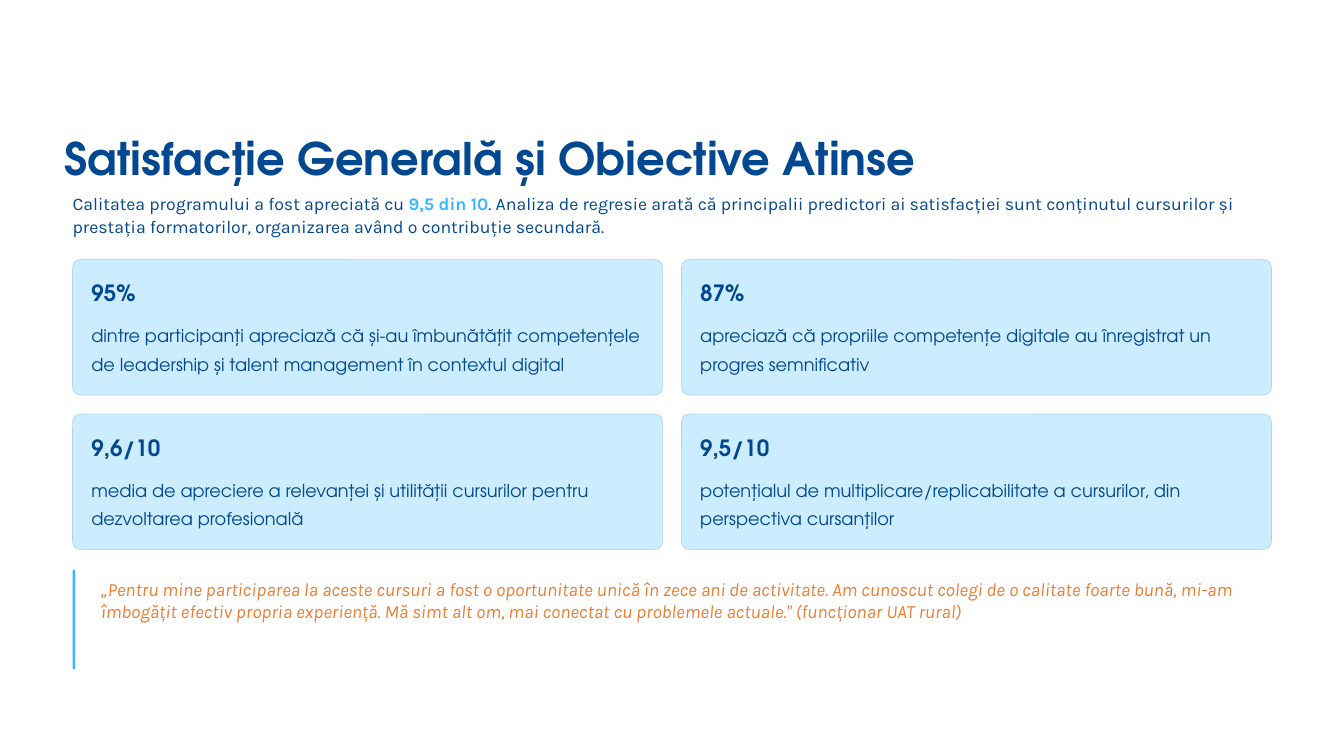
from pptx import Presentation
from pptx.dml.color import RGBColor
from pptx.enum.shapes import MSO_SHAPE as SHAPE
from pptx.enum.text import MSO_ANCHOR as ANCHOR, MSO_AUTO_SIZE as AUTO, PP_ALIGN as ALIGN
from pptx.util import Inches, Pt

COLORS = {
    "navy": "014890",
    "sky": "38B6FF",
    "card": "CCECFF",
    "border": "B2D2E5",
    "orange": "ED7D31",
    "white": "FFFFFF",
}
HEAD_FONT = "TeX Gyre Adventor"
BODY_FONT = "Karla"

CARDS = [
    ("95%", "dintre participanți apreciază că și-au îmbunătățit competențele "
            "de leadership și talent management în contextul digital"),
    ("87%", "apreciază că propriile competențe digitale au înregistrat un "
            "progres semnificativ"),
    ("9,6/10", "media de apreciere a relevanței și utilității cursurilor pentru "
               "dezvoltarea profesională"),
    ("9,5/10", "potențialul de multiplicare/replicabilitate a cursurilor, din "
               "perspectiva cursanților"),
]


def rgb(name):
    return RGBColor.from_string(COLORS[name])


def add_run(p, text, font=BODY_FONT, size=9.5, color="navy", bold=False, italic=False):
    r = p.add_run()
    r.text = text
    r.font.name = font
    r.font.size = Pt(size)
    r.font.color.rgb = rgb(color)
    r.font.bold = bold
    r.font.italic = italic


class SlideBuilder:
    def __init__(self, slide):
        self.slide = slide
        slide.background.fill.solid()
        slide.background.fill.fore_color.rgb = rgb("white")

    def frame(self, sp, spacing, wrap):
        tf = sp.text_frame
        tf.margin_left = tf.margin_right = tf.margin_top = tf.margin_bottom = 0
        tf.auto_size = AUTO.NONE
        tf.vertical_anchor = ANCHOR.TOP
        tf.word_wrap = wrap
        p = tf.paragraphs[0]
        p.alignment = ALIGN.LEFT
        p.line_spacing = Pt(spacing)
        return p

    def title(self, text, x, y, w, h):
        sp = self.slide.shapes.title
        sp.left, sp.top, sp.width, sp.height = map(Inches, (x, y, w, h))
        p = self.frame(sp, 30.5, False)
        add_run(p, text, font=HEAD_FONT, size=24, bold=True)

    def text(self, runs, x, y, w, h, spacing=12, wrap=True):
        sp = self.slide.shapes.add_textbox(*map(Inches, (x, y, w, h)))
        p = self.frame(sp, spacing, wrap)
        for text, style in runs:
            add_run(p, text, **style)

    def box(self, kind, x, y, w, h, fill, line=None):
        sp = self.slide.shapes.add_shape(kind, *map(Inches, (x, y, w, h)))
        sp.shadow.inherit = False
        sp.fill.solid()
        sp.fill.fore_color.rgb = rgb(fill)
        if line:
            sp.line.color.rgb = rgb(line)
            sp.line.width = Pt(0.38)
        else:
            sp.line.fill.background()
        return sp

    def card(self, value, label, x, y):
        sp = self.box(SHAPE.ROUNDED_RECTANGLE, x, y, 4.39, 1.01, "card", "border")
        sp.adjustments[0] = 0.06
        self.text([(value, dict(font=HEAD_FONT, size=12, bold=True))],
                  x + 0.14, y + 0.14, 1.7, 0.21, spacing=15, wrap=False)
        self.text([(label, dict(font=HEAD_FONT))],
                  x + 0.14, y + 0.43, 4.11, 0.43, spacing=15.5)


def main():
    prs = Presentation()
    prs.slide_width = Inches(10)
    prs.slide_height = prs.slide_width * 9 // 16
    s = SlideBuilder(prs.slides.add_slide(prs.slide_layouts[5]))

    s.title("Satisfacție Generală și Obiective Atinse", 0.48, 0.95, 6.47, 0.42)
    s.text([
        ("Calitatea programului a fost apreciată cu ", {}),
        ("9,5 din 10", dict(color="sky", bold=True)),
        (". Analiza de regresie arată că principalii predictori ai satisfacției sunt "
         "conținutul cursurilor și prestația formatorilor, organizarea având o "
         "contribuție secundară.", {}),
    ], 0.54, 1.43, 8.91, 0.43)

    for i, (value, label) in enumerate(CARDS):
        row, col = divmod(i, 2)
        s.card(value, label, 0.54 + col * 4.53, 1.93 + row * 1.15)

    s.text([
        ("„Pentru mine participarea la aceste cursuri a fost o oportunitate unică în "
         "zece ani de activitate. Am cunoscut colegi de o calitate foarte bună, mi-am "
         "îmbogățit efectiv propria experiență. Mă simt alt om, mai conectat cu "
         "problemele actuale.\" (funcționar UAT rural)",
         dict(size=10, color="orange", italic=True)),
    ], 0.75, 4.3, 8.71, 0.43)
    s.box(SHAPE.RECTANGLE, 0.54, 4.24, 0.02, 0.74, "sky")

    prs.save("out.pptx")


if __name__ == "__main__":
    main()
